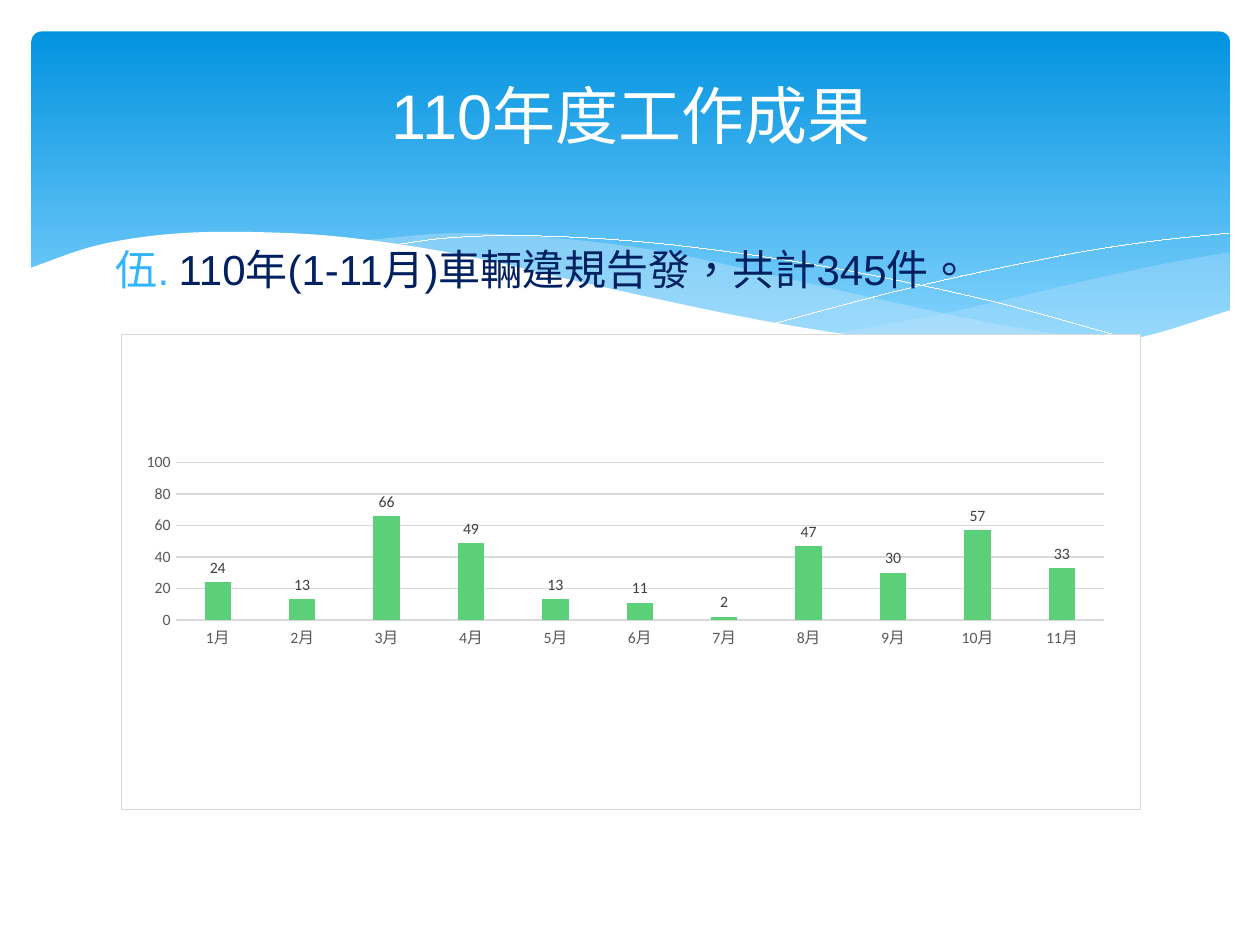
from dataclasses import dataclass

from lxml import etree
from pptx import Presentation
from pptx.chart.data import CategoryChartData
from pptx.dml.color import RGBColor
from pptx.enum.chart import XL_CHART_TYPE, XL_LABEL_POSITION, XL_TICK_MARK
from pptx.enum.shapes import MSO_SHAPE
from pptx.enum.text import MSO_ANCHOR, PP_ALIGN
from pptx.oxml import parse_xml
from pptx.oxml.ns import nsdecls, qn
from pptx.util import Inches, Pt

COLUMNS = XL_CHART_TYPE.COLUMN_CLUSTERED
OUTSIDE_END = XL_LABEL_POSITION.OUTSIDE_END
NO_TICK = XL_TICK_MARK.NONE
ROUNDED = MSO_SHAPE.ROUNDED_RECTANGLE
MIDDLE = MSO_ANCHOR.MIDDLE
CENTER = PP_ALIGN.CENTER
TITLE_ONLY = 5
STEPS_PER_KNOT = 8


@dataclass(frozen=True)
class Theme:
    latin: str = "Arial"
    plain: str = "Calibri"
    language: str = "zh-TW"
    white: str = "FFFFFF"
    black: str = "000000"
    banner_top: str = "0293E0"
    banner_bottom: str = "83D3FE"
    wave: str = "C6E7FC"
    body: str = "002060"
    bullet: str = "31B6FD"
    column: str = "5BD078"
    rule: str = "D9D9D9"
    axis_text: str = "595959"
    label_text: str = "404040"
    title_size: int = 36
    body_size: int = 24
    chart_size: int = 10
    label_size: int = 9
    rule_width: float = 0.75
    hairline_width: float = 0.01


# Each edge is a curve through a few (x, y) knots in inches, from left to right.
RIGHT_WAVE_TOP = [(6.61, 2.65), (7.53, 2.48), (8.61, 2.23), (9.21, 2.1), (9.76, 2)]
RIGHT_WAVE_BOTTOM = [(6.61, 2.65), (7.32, 2.74), (8.14, 2.78), (8.81, 2.73),
                     (9.35, 2.62), (9.76, 2.47)]
LONG_WAVE_TOP = [(2.86, 1.91), (3.61, 1.85), (4.42, 1.89), (5.28, 2), (6.29, 2.22),
                 (7.41, 2.47), (8.07, 2.6), (8.93, 2.73)]
LONG_WAVE_BOTTOM = [(2.86, 1.91), (3.62, 2.03), (4.49, 2.22), (5.66, 2.48), (6.65, 2.66),
                    (7.48, 2.76), (8.18, 2.78), (8.93, 2.73)]
FALLING_LINE = [(3.09, 1.95), (3.53, 1.89), (4.16, 1.87), (5.1, 1.92), (6.08, 2.04),
                (6.95, 2.19), (7.95, 2.41), (9.07, 2.72)]
RISING_LINE = [(6.13, 2.57), (7.2, 2.29), (8.36, 2.04), (9.1, 1.92), (9.75, 1.85)]
WHITE_WAVE_TOP = [(0.23, 2.13), (0.76, 1.95), (1.32, 1.86), (1.93, 1.84), (2.71, 1.88),
                  (3.65, 2.02), (4.75, 2.27), (6.03, 2.54), (7.08, 2.7), (8.09, 2.77),
                  (8.99, 2.69), (9.77, 2.46)]
WHITE_WAVE_BOTTOM = [(0.23, 3.29), (9.77, 3.29)]

VIOLATIONS = [24, 13, 66, 49, 13, 11, 2, 47, 30, 57, 33]


def smooth_curve(knots):
    """Join the knots by cubic Hermite pieces; a slope follows the knots on either side."""
    slopes = []
    for index in range(len(knots)):
        before = knots[max(index - 1, 0)]
        after = knots[min(index + 1, len(knots) - 1)]
        slopes.append((after[1] - before[1]) / (after[0] - before[0]))
    points = [knots[0]]
    for index, ((x0, y0), (x1, y1)) in enumerate(zip(knots, knots[1:])):
        run = x1 - x0
        for step in range(1, STEPS_PER_KNOT + 1):
            t = step / STEPS_PER_KNOT
            blend = t * t * (3 - 2 * t)
            bend = (t * (1 - t) ** 2 * slopes[index]
                    - t * t * (1 - t) * slopes[index + 1])
            points.append((x0 + t * run, y0 + blend * (y1 - y0) + run * bend))
    return points


class Page:
    def __init__(self, deck, theme):
        self.theme = theme
        self.slide = deck.slides.add_slide(deck.slide_layouts[TITLE_ONLY])
        self.shapes = self.slide.shapes

    def paint(self, fill, color):
        fill.solid()
        fill.fore_color.rgb = RGBColor.from_string(color)

    def stroke(self, line, color, width):
        line.color.rgb = RGBColor.from_string(color)
        line.width = Pt(width)

    def style_font(self, font, name, size, color):
        font.name, font.size = name, Pt(size)
        font.color.rgb = RGBColor.from_string(color)

    def add_span(self, para, text, name, size, color):
        span = para.add_run()
        span.text = text
        self.style_font(span.font, name, size, color)
        span.font._rPr.set("lang", self.theme.language)

    def banner(self, left, top, width, height):
        box = self.shapes.add_shape(ROUNDED, *map(Inches, (left, top, width, height)))
        box.shadow.inherit = False
        box.adjustments[0] = 0.03
        box.line.fill.background()
        box.fill.gradient()
        box.fill.gradient_angle = 270
        stops = zip(box.fill.gradient_stops, (0, 0.9),
                    (self.theme.banner_top, self.theme.banner_bottom))
        for stop, position, color in stops:
            stop.position = position
            stop.color.rgb = RGBColor.from_string(color)

    def outline(self, points, close):
        corners = [(Inches(x), Inches(y)) for x, y in points]
        builder = self.shapes.build_freeform(*corners[0])
        builder.add_line_segments(corners[1:], close=close)
        shape = builder.convert_to_shape()
        shape.shadow.inherit = False
        return shape

    def wave(self, top_edge, bottom_edge, color, opacity=100):
        """Fill the band between two edges; opacity is in percent."""
        shape = self.outline(smooth_curve(top_edge) + smooth_curve(bottom_edge)[::-1], True)
        shape.line.fill.background()
        self.paint(shape.fill, color)
        if opacity < 100:
            tint = shape._element.spPr.find(".//" + qn("a:srgbClr"))
            etree.SubElement(tint, qn("a:alpha"), val=str(opacity * 1000))

    def hairline(self, knots):
        shape = self.outline(smooth_curve(knots), False)
        shape.fill.background()
        self.stroke(shape.line, self.theme.white, self.theme.hairline_width)

    def title(self, spans, left, top, width, height):
        box = self.shapes.title
        box.left, box.top, box.width, box.height = map(Inches, (left, top, width, height))
        box.text_frame.vertical_anchor = MIDDLE
        para = box.text_frame.paragraphs[0]
        para.alignment = CENTER
        for text, name in spans:
            self.add_span(para, text, name, self.theme.title_size, self.theme.white)
        self.shapes._spTree.append(box._element)  # in front of the waves

    def numbered_line(self, text, number, left, top, width, height):
        """Add one line with a Chinese numeral, set above the middle of its box."""
        box = self.shapes.add_textbox(*map(Inches, (left, top, width, height)))
        frame = box.text_frame
        frame.word_wrap = True
        frame.vertical_anchor = MIDDLE
        frame.margin_bottom = Inches(0.29)
        para = frame.paragraphs[0]
        self.add_span(para, text, self.theme.latin, self.theme.body_size, self.theme.body)
        props = para._p.get_or_add_pPr()
        props.set("marL", str(Inches(0.5)))
        props.set("indent", str(Inches(-0.5)))
        color = etree.SubElement(props, qn("a:buClr"))
        etree.SubElement(color, qn("a:srgbClr"), val=self.theme.bullet)
        etree.SubElement(props, qn("a:buAutoNum"), type="ea1ChtPeriod", startAt=str(number))

    def column_chart(self, categories, values, left, top, width, height):
        theme = self.theme
        data = CategoryChartData()
        data.categories = categories
        data.add_series("Series 1", values)
        place = map(Inches, (left, top, width, height))
        chart = self.shapes.add_chart(COLUMNS, *place, data).chart
        chart.has_legend = chart.has_title = False
        self.style_font(chart.font, theme.plain, theme.chart_size, theme.black)
        for axis in (chart.category_axis, chart.value_axis):
            axis.major_tick_mark = axis.minor_tick_mark = NO_TICK
            self.style_font(axis.tick_labels.font, theme.plain, theme.label_size,
                            theme.axis_text)
        self.stroke(chart.category_axis.format.line, theme.rule, theme.rule_width)
        scale = chart.value_axis
        scale.minimum_scale, scale.maximum_scale, scale.major_unit = 0, 100, 20
        scale.format.line.fill.background()
        self.stroke(scale.major_gridlines.format.line, theme.rule, theme.rule_width)

        plot = chart.plots[0]
        plot.gap_width, plot.overlap, plot.vary_by_categories = 219, -27, False
        self.paint(plot.series[0].format.fill, theme.column)
        plot.has_data_labels = True
        labels = plot.data_labels
        labels.show_value, labels.position = True, OUTSIDE_END
        self.style_font(labels.font, theme.plain, theme.label_size, theme.label_text)
        self.frame_chart(chart, x=0.43 / width, y=1.02 / height,
                         w=7.38 / width, h=1.25 / height)

    def frame_chart(self, chart, **plot_box):
        """Give the chart its background and border, and fix its inner plot area."""
        root = chart._chartSpace
        root.find(qn("c:chart")).addnext(parse_xml(
            f'<c:spPr {nsdecls("c", "a")}>'
            f'<a:solidFill><a:srgbClr val="{self.theme.white}"/></a:solidFill>'
            f'<a:ln w="{Pt(self.theme.rule_width)}"><a:solidFill>'
            f'<a:srgbClr val="{self.theme.rule}"/></a:solidFill></a:ln></c:spPr>'))
        area = root.find(".//" + qn("c:plotArea"))
        for old in area.findall(qn("c:layout")):
            area.remove(old)
        sizes = "".join(f'<c:{key} val="{part:.3f}"/>' for key, part in plot_box.items())
        area.insert(0, parse_xml(
            f'<c:layout {nsdecls("c")}><c:manualLayout><c:layoutTarget val="inner"/>'
            f'<c:xMode val="edge"/><c:yMode val="edge"/>{sizes}</c:manualLayout></c:layout>'))


def main():
    deck = Presentation()
    deck.slide_width, deck.slide_height = Inches(10), Inches(7.5)
    theme = Theme()
    page = Page(deck, theme)
    page.banner(0.25, 0.25, 9.51, 2.7)
    page.wave(RIGHT_WAVE_TOP, RIGHT_WAVE_BOTTOM, theme.wave, 29)
    page.wave(LONG_WAVE_TOP, LONG_WAVE_BOTTOM, theme.wave, 40)
    for knots in (FALLING_LINE, RISING_LINE):
        page.hairline(knots)
    page.wave(WHITE_WAVE_TOP, WHITE_WAVE_BOTTOM, theme.white)
    page.title([("110", theme.latin), ("年度工作成果", theme.plain)], 0.51, 0.44, 9, 0.94)
    page.numbered_line("110年(1-11月)車輛違規告發，共計345件。", 5, 0.82, 1.23, 8.66, 2.05)
    months = [f"{month}月" for month in range(1, len(VIOLATIONS) + 1)]
    page.column_chart(months, VIOLATIONS, 0.96, 2.65, 8.1, 3.78)
    deck.save("out.pptx")


if __name__ == "__main__":
    main()
